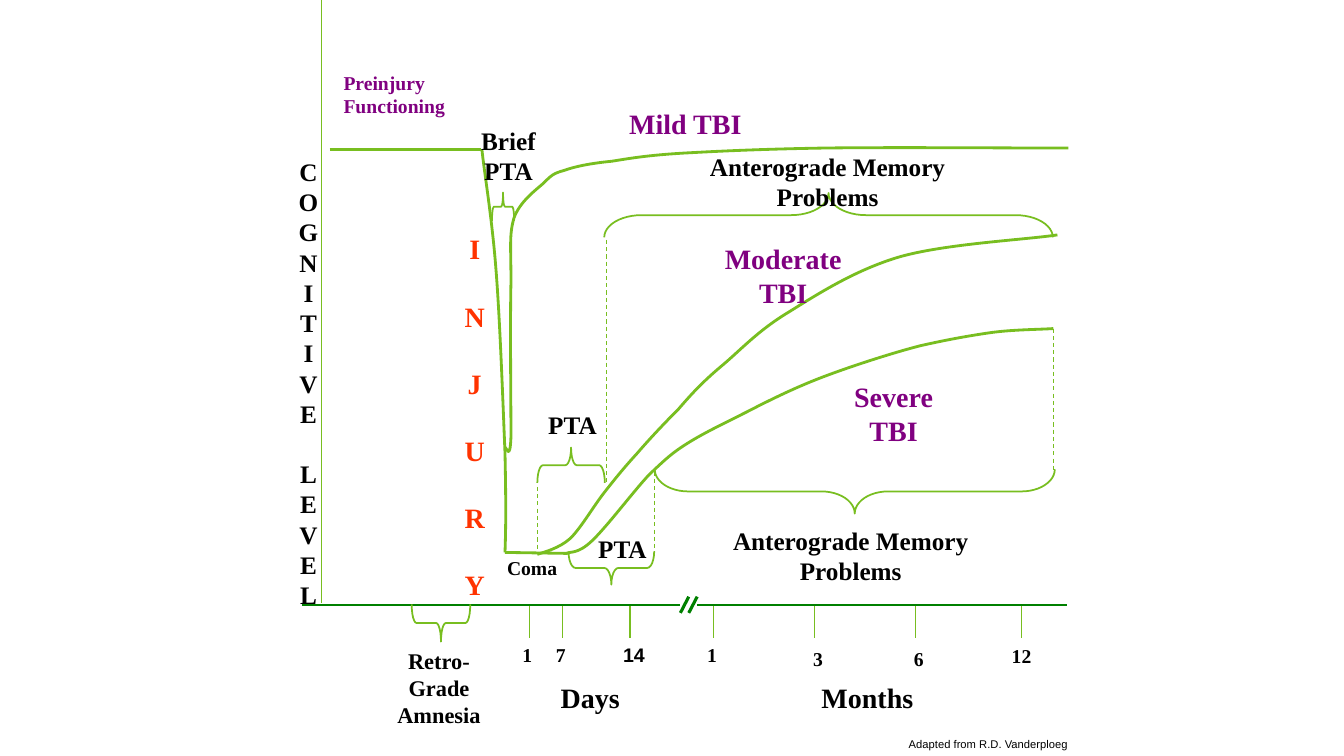
from dataclasses import dataclass

import pptx
import pptx.dml.color
import pptx.enum.dml
import pptx.enum.shapes
import pptx.enum.text
import pptx.oxml.ns
import pptx.util
from lxml import etree

Pt = pptx.util.Pt
qn = pptx.oxml.ns.qn
ALIGN = pptx.enum.text.PP_ALIGN
GREEN, AXIS_GREEN = "78BE20", "008000"
BLACK, PURPLE, RED = "000000", "800080", "FF3300"
AXIS_Y = 432


@dataclass
class Line:
    x1: float
    y1: float
    x2: float
    y2: float
    weight: float = 0.75
    color: str = GREEN
    dashed: bool = False


@dataclass
class Brace:
    center_x: float
    center_y: float
    span: float
    depth: float
    curl: float
    tip_up: bool


@dataclass
class Label:
    text: str
    left: float
    top: float
    width: float
    height: float
    size: float = 18
    color: str = BLACK
    font: str = "Times New Roman"
    align: ALIGN = ALIGN.CENTER
    bold: bool = True
    inset_x: float = 0
    inset_y: float = 0
    gap: float = 0


def rgb(value: str) -> pptx.dml.color.RGBColor:
    return pptx.dml.color.RGBColor.from_string(value)


def draw_line(slide, line: Line) -> None:
    connector = slide.shapes.add_connector(
        pptx.enum.shapes.MSO_CONNECTOR.STRAIGHT,
        Pt(line.x1), Pt(line.y1), Pt(line.x2), Pt(line.y2))
    connector.line.color.rgb = rgb(line.color)
    connector.line.width = Pt(line.weight)
    if line.dashed:
        connector.line.dash_style = pptx.enum.dml.MSO_LINE.DASH
    etree.SubElement(connector.element.spPr, qn("a:effectLst"))


def outline_only(shape, weight: float) -> None:
    shape.shadow.inherit = False
    shape.fill.background()
    shape.line.color.rgb = rgb(GREEN)
    shape.line.width = Pt(weight)


def draw_brace(slide, brace: Brace) -> None:
    """Place a left brace by its centre and turn its tip up or down."""
    shape = slide.shapes.add_shape(
        pptx.enum.shapes.MSO_SHAPE.LEFT_BRACE,
        Pt(brace.center_x - brace.depth / 2), Pt(brace.center_y - brace.span / 2),
        Pt(brace.depth), Pt(brace.span))
    shape.rotation = 90 if brace.tip_up else 270
    shape.adjustments[0] = brace.curl
    outline_only(shape, 1.25)


def draw_curve(slide, points: list[tuple[float, float]]) -> None:
    """Draw a start point followed by Bezier triples (control, control, end)."""
    start, *rest = [(Pt(x), Pt(y)) for x, y in points]
    builder = slide.shapes.build_freeform(*start)
    builder.add_line_segments(rest, close=False)
    shape = builder.convert_to_shape()
    outline = next(shape.element.iter(qn("a:path")))
    segments = outline.findall(qn("a:lnTo"))
    for first in range(0, len(segments), 3):
        bezier = etree.SubElement(outline, qn("a:cubicBezTo"))
        for segment in segments[first:first + 3]:
            bezier.append(segment[0])
            outline.remove(segment)
    outline_only(shape, 2)


def draw_label(slide, label: Label) -> None:
    frame = slide.shapes.add_textbox(
        Pt(label.left), Pt(label.top), Pt(label.width), Pt(label.height)).text_frame
    frame.word_wrap = True
    frame.margin_left = frame.margin_right = Pt(label.inset_x)
    frame.margin_top = frame.margin_bottom = Pt(label.inset_y)
    frame.text = label.text
    for index, paragraph in enumerate(frame.paragraphs):
        paragraph.alignment = label.align
        if index and label.gap:
            paragraph.space_before = Pt(label.gap)
        paragraph.font.name = label.font
        paragraph.font.size = Pt(label.size)
        paragraph.font.bold = label.bold
        paragraph.font.color.rgb = rgb(label.color)


def tick_label(text: str, left: float, width: float = 24,
               font: str = "Times New Roman") -> Label:
    return Label(text, left, 456, width, 24, 14, font=font, align=ALIGN.LEFT,
                 inset_x=7.2, inset_y=3.6)


INJURY_DROP = [
    (344.2, 106.6), (345.6, 121), (351.4, 155.5), (354.2, 191.5),
    (357.1, 227.5), (359.3, 289.4), (360.7, 323.3),
    (361.4, 357.1), (361.4, 375.8), (360.7, 394.6)]
MILD = [
    (360.7, 319.7), (361.4, 318.2), (364.3, 331.2), (365, 311.8),
    (365, 291.6), (364.3, 228.2), (365, 201.6), (365, 175.7), (363.6, 167.8), (367.2, 155.5),
    (371.5, 144), (382.3, 136.1), (388.1, 131), (393.8, 125.3), (395.3, 123.8), (403.2, 121.7),
    (411.1, 118.8), (422.6, 116.6), (437, 115.2), (450.7, 113), (463, 110.9), (488.2, 109.4),
    (513.4, 108), (542.2, 106.6), (587.5, 105.8), (633.6, 105.1), (726.5, 105.8), (763.2, 105.8)]
MODERATE = [
    (383.8, 396), (388.1, 394.6), (399.6, 391.7), (407.5, 384.5),
    (415.4, 376.6), (424.1, 361.4), (432, 351.4), (439.9, 341.3), (446.4, 333.4), (455, 324),
    (463.7, 313.9), (474.5, 302.4), (484.6, 292.3), (493.9, 281.5), (501.8, 272.9), (515.5, 261.4),
    (528.5, 250.6), (541.4, 236.2), (563, 223.2), (583.9, 210.2), (610.6, 193), (642.2, 183.6),
    (674.6, 174.2), (731.5, 171.4), (755.3, 167.8)]
SEVERE = [
    (404.6, 395.3), (407.5, 393.8), (412.6, 396), (422.6, 386.6),
    (432.7, 377.3), (452.2, 351.4), (463.7, 339.1), (475.9, 327.6), (480.2, 323.3), (493.2, 315.4),
    (506.2, 307.4), (524.9, 298.8), (541.4, 290.2), (557.3, 282.2), (572.4, 275), (591.8, 267.8),
    (611.3, 260.6), (637.9, 252), (657.4, 247), (676.8, 242.6), (692.6, 239.8), (707.8, 237.6),
    (723.6, 235.4), (743, 235.4), (752.4, 234.7)]

TICKS = [Line(x, AXIS_Y, x, AXIS_Y + 24) for x in (378, 402, 450, 510, 582, 654, 730)]
SPAN_LIMITS = [Line(x, top, x, bottom, dashed=True) for x, top, bottom in (
    (467.3, 337, 396.7), (752.4, 234.7, 337.7), (383.8, 347.8, 393.8), (433.4, 171.4, 344.2))]
AXIS_BREAK = [Line(x, AXIS_Y - 5.8, x - 6, AXIS_Y + 5.8, 2.25, AXIS_GREEN) for x in (492, 498)]
LINES = [
    *SPAN_LIMITS,
    Line(229.7, 0, 229.7, 430.6),
    Line(235.4, 106.6, 343.4, 106.6, 2),
    Line(360.7, 394.6, 405.4, 395.3, 2),
    *TICKS,
    Line(216, AXIS_Y, 486, AXIS_Y, 1.5, AXIS_GREEN),
    Line(498, AXIS_Y, 762, AXIS_Y, 1.5, AXIS_GREEN),
    *AXIS_BREAK]
BRACES = [
    Brace(436.7, 405.7, 61.2, 23.8, 0.21, False),
    Brace(315, 445, 41.8, 26.6, 0.13, False),
    Brace(591.8, 153.7, 320.4, 31.7, 0.84, True),
    Brace(359.3, 147.6, 15.8, 20.2, 0.08, True),
    Brace(407.9, 332.3, 48.2, 25.2, 0.16, True),
    Brace(610.6, 351, 285.8, 31.7, 0.75, False)]
LABELS = [
    Label("COGNITIVE\nLEVEL", 203.8, 108, 33.1, 344, inset_x=7.2, inset_y=3.6, gap=21.6),
    Label("I\nN\nJ\nU\nR\nY", 324, 162, 30.2, 239, 20, RED, inset_x=7.2, inset_y=3.6, gap=24),
    Label("Preinjury Functioning", 238.3, 50.4, 93.6, 51.8, 14, PURPLE,
          align=ALIGN.LEFT, inset_x=7.2),
    Label("Brief PTA", 339.8, 89.3, 46.8, 43.9),
    Label("PTA", 385.2, 292.3, 47.5, 21.6),
    Label("PTA", 421.2, 380.9, 46.8, 21.6),
    Label("Coma", 361.4, 397.4, 37.4, 23.8, 14),
    Label("Mild TBI", 445.7, 76.3, 87.8, 25.2, 20, PURPLE),
    Label("Moderate TBI", 511.2, 172.8, 96.5, 31, 20, PURPLE),
    Label("Severe TBI", 594.7, 271.4, 87.1, 31, 20, PURPLE),
    Label("Anterograde Memory Problems", 473.8, 108, 234.7, 31),
    Label("Anterograde Memory Problems", 490.3, 375.1, 234.7, 29.5),
    Label("Retro-\nGrade Amnesia", 270, 462.2, 87.1, 59.8, 16),
    Label("Days", 378, 486, 87.1, 31, 20),
    Label("Months", 576, 486, 87.1, 31, 20),
    tick_label("1", 366),
    tick_label("7", 390),
    tick_label("14", 438, 36, "Arial"),
    tick_label("1", 498),
    Label("3", 576, 462, 16.6, 24.5, 14),
    Label("6", 648, 462, 16.6, 24.5, 14),
    Label("12", 721.4, 460, 16.6, 24.5, 14),
    Label("Adapted from R.D. Vanderploeg", 642, 523.4, 198, 16.6, 8, font="Arial",
          align=ALIGN.LEFT, bold=False, inset_x=7.2, inset_y=3.6)]


def main() -> None:
    deck = pptx.Presentation()
    deck.slide_width, deck.slide_height = Pt(960), Pt(540)
    slide = deck.slides.add_slide(deck.slide_layouts[6])
    for line in LINES:
        draw_line(slide, line)
    for curve in (INJURY_DROP, MILD, MODERATE, SEVERE):
        draw_curve(slide, curve)
    for brace in BRACES:
        draw_brace(slide, brace)
    for label in LABELS:
        draw_label(slide, label)
    deck.save("out.pptx")


if __name__ == "__main__":
    main()
